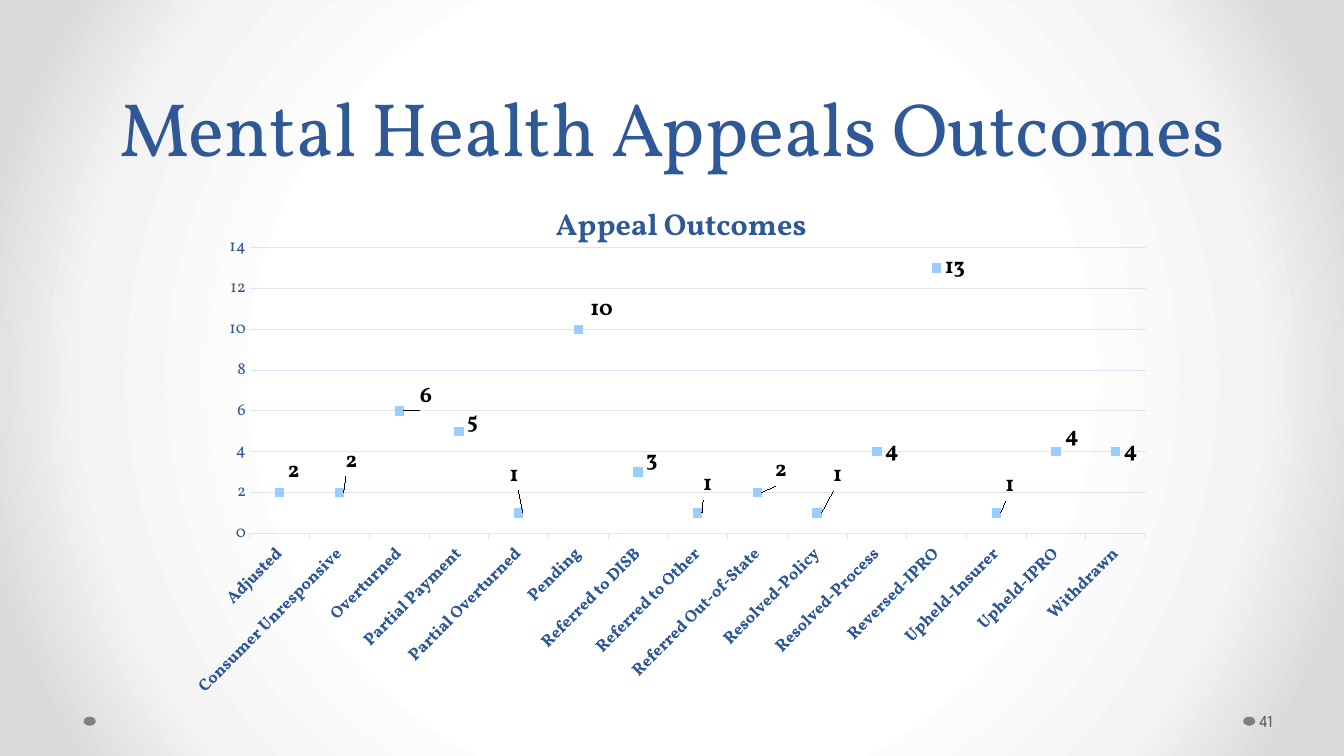
from lxml import etree
from pptx import Presentation
from pptx.chart.data import CategoryChartData
from pptx.dml.color import RGBColor
from pptx.enum import chart as ch, shapes, text
from pptx.oxml import parse_xml
from pptx.oxml.ns import nsdecls, qn
from pptx.util import Inches, Pt

NAVY = RGBColor(0x2F, 0x58, 0x97)
SKY = RGBColor(0x99, 0xCC, 0xFF)
PALE = RGBColor(0xDB, 0xE5, 0xF4)
BLACK = RGBColor(0, 0, 0)
GREY = RGBColor(0x80, 0x80, 0x80)
DARK = RGBColor(0x59, 0x59, 0x59)
GLOW = [(50, RGBColor(0xFF, 0xFF, 0xFF)), (76, RGBColor(0xF4, 0xF4, 0xF4)),
        (92, RGBColor(0xDA, 0xDA, 0xDA))]
SERIF = "Vollkorn"
SANS = "League Spartan"

# Outcome, count, and label shift in percent of the chart's width and height
OUTCOMES = [
    ("Adjusted", 2, (0, -4)),
    ("Consumer Unresponsive", 2, (-0.2, -5.9)),
    ("Overturned", 6, (1.3, -2.7)),
    ("Partial Payment", 5, (0, -1.7)),
    ("Partial Overturned", 1, (-1.8, -7.1)),
    ("Pending", 10, (0.4, -3.8)),
    ("Referred to DISB", 3, (0, -2.2)),
    ("Referred to Other", 1, (-0.3, -5.3)),
    ("Referred Out-of-State", 2, (1, -4.1)),
    ("Resolved-Policy", 1, (0.8, -7)),
    ("Resolved-Process", 4, None),
    ("Reversed-IPRO", 13, None),
    ("Upheld-Insurer", 1, (0.1, -5.1)),
    ("Upheld-IPRO", 4, (0.1, -2.8)),
    ("Withdrawn", 4, None),
]


def set_font(font, size, color, name=SERIF, bold=False):
    font.size, font.name, font.bold = Pt(size), name, bold
    font.color.rgb = color


def add_glow(slide):
    """Fill the background with a round gradient, light at the centre."""
    fill = slide.background.fill
    fill.gradient()
    grad = slide.background._cSld.find(".//" + qn("a:gradFill"))
    stops = "".join(f'<a:gs pos="{pos * 1000}"><a:srgbClr val="{color}"/></a:gs>'
                    for pos, color in GLOW)
    grad.getparent().replace(grad, parse_xml(
        f'<a:gradFill {nsdecls("a")} rotWithShape="1"><a:gsLst>{stops}</a:gsLst>'
        '<a:path path="circle"><a:fillToRect l="50000" t="50000" r="50000" '
        'b="50000"/></a:path></a:gradFill>'))


def add_dot(slide, left):
    dot = slide.shapes.add_shape(shapes.MSO_SHAPE.OVAL, Inches(left), Inches(7.11),
                                 Inches(0.12), Inches(0.09))
    dot.shadow.inherit = False
    dot.fill.solid()
    dot.fill.fore_color.rgb = GREY
    dot.line.fill.background()


def add_text(slide, words, box, anchor):
    frame = slide.shapes.add_textbox(*map(Inches, box)).text_frame
    frame.word_wrap = True
    frame.vertical_anchor = anchor
    frame.text = words
    return frame


def add_title(slide):
    frame = add_text(slide, "Mental Health Appeals Outcomes", (0.67, 0, 12, 1.75),
                     text.MSO_ANCHOR.BOTTOM)
    para = frame.paragraphs[0]
    para.alignment = text.PP_ALIGN.CENTER
    para.line_spacing = Pt(58)
    set_font(para.runs[0].font, 54, NAVY)


def add_number(slide):
    frame = add_text(slide, "41", (12.46, 6.95, 0.82, 0.4), text.MSO_ANCHOR.MIDDLE)
    frame.margin_left = Inches(0.03)
    frame.margin_right = Inches(0.05)
    set_font(frame.paragraphs[0].runs[0].font, 12, DARK, SANS)


def place(parent, index, **parts):
    """Give a chart part a manual layout, as its child at index."""
    for old in parent.findall(qn("c:layout")):
        parent.remove(old)
    layout = parse_xml(f'<c:layout {nsdecls("c")}><c:manualLayout/></c:layout>')
    for tag, val in parts.items():
        etree.SubElement(layout[0], qn("c:" + tag)).set("val", str(val))
    parent.insert(index, layout)


def style_axes(chart):
    cat, val = chart.category_axis, chart.value_axis
    set_font(cat.tick_labels.font, 12, NAVY, bold=True)
    cat._element.find(qn("c:txPr")).find(qn("a:bodyPr")).set("rot", "-2700000")
    cat.major_tick_mark = ch.XL_TICK_MARK.OUTSIDE
    set_font(val.tick_labels.font, 12, NAVY)
    val.minimum_scale, val.maximum_scale, val.major_unit = 0, 14, 2
    val.major_tick_mark = ch.XL_TICK_MARK.NONE
    val.format.line.fill.background()
    for line in (cat.format.line, val.major_gridlines.format.line):
        line.color.rgb = PALE
        line.width = Pt(0.75)


def style_series(series):
    series.smooth = False
    series.format.line.fill.background()
    mark = series.marker
    mark.style, mark.size = ch.XL_MARKER_STYLE.SQUARE, 6
    mark.format.fill.solid()
    mark.format.fill.fore_color.rgb = SKY
    mark.format.line.fill.background()


def add_labels(series):
    labels = series.data_labels
    labels.show_value = True
    labels.position = ch.XL_LABEL_POSITION.RIGHT
    set_font(labels.font, 16, BLACK, bold=True)
    for num, (_, _, shift) in enumerate(OUTCOMES):
        if shift:
            label = series.points[num].data_label
            label.position = ch.XL_LABEL_POSITION.RIGHT
            set_font(label.font, 16, BLACK, bold=True)
    for item in labels._element.findall(qn("c:dLbl")):
        across, down = OUTCOMES[int(item[0].get("val"))][2]
        place(item, 1, x=across / 100, y=down / 100)


def add_chart(slide):
    data = CategoryChartData()
    data.categories = [name for name, _, _ in OUTCOMES]
    data.add_series("Series 1", [count for _, count, _ in OUTCOMES])
    box = map(Inches, (1.92, 1.75, 9.5, 5.2))
    chart = slide.shapes.add_chart(ch.XL_CHART_TYPE.LINE_MARKERS, *box, data).chart
    chart.has_legend = False
    set_font(chart.font, 10, BLACK)
    chart.plots[0].vary_by_categories = False
    title = chart.chart_title
    title.text_frame.text = "Appeal Outcomes"
    set_font(title.text_frame.paragraphs[0].runs[0].font, 21.6, NAVY, bold=True)
    place(title._element, 1, xMode="edge", yMode="edge", x=0.37, y=0.04)
    place(chart._chartSpace.chart.plotArea, 0, layoutTarget="inner", xMode="edge",
          yMode="edge", x=0.055, y=0.136, w=0.939, h=0.545)
    style_axes(chart)
    series = chart.plots[0].series[0]
    style_series(series)
    add_labels(series)


def main():
    deck = Presentation()
    deck.slide_width, deck.slide_height = Inches(13.33), Inches(7.5)
    slide = deck.slides.add_slide(deck.slide_layouts[6])
    add_glow(slide)
    for left in (12.33, 0.83):
        add_dot(slide, left)
    add_title(slide)
    add_number(slide)
    add_chart(slide)
    deck.save("out.pptx")


if __name__ == "__main__":
    main()
